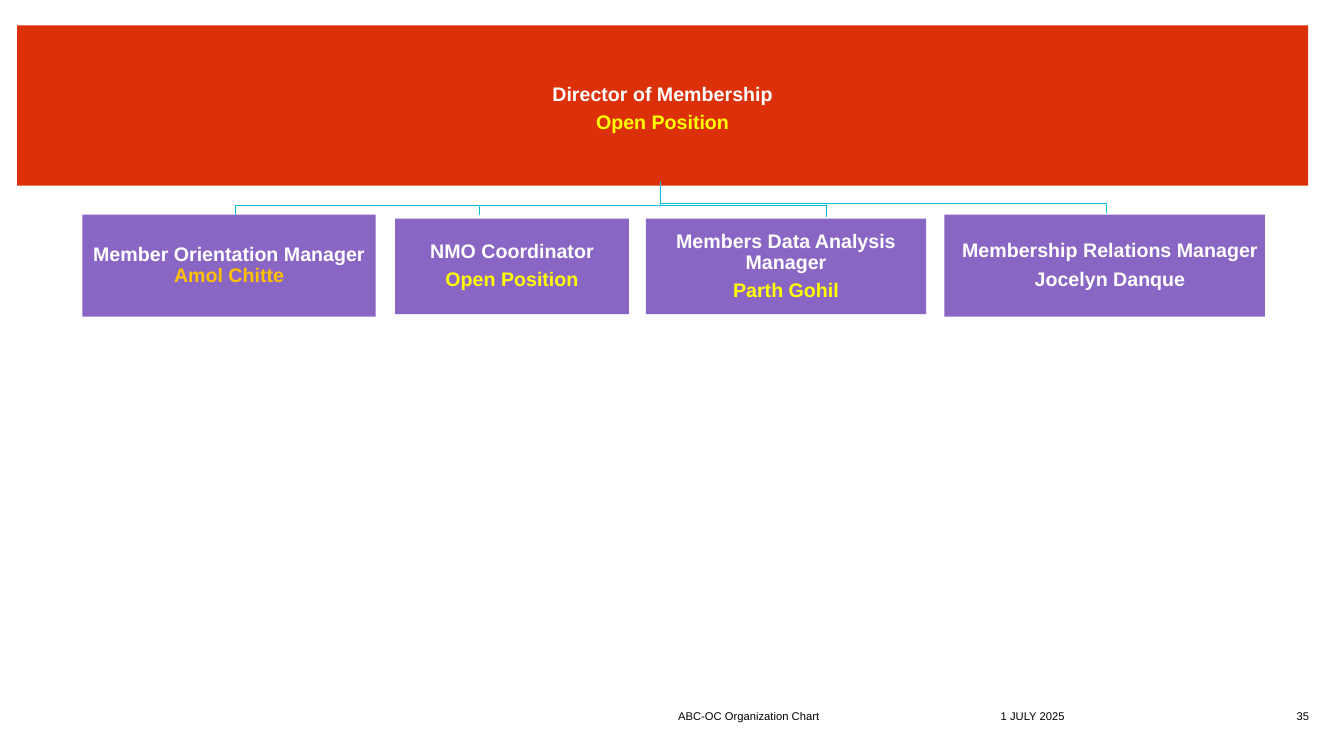
from pptx import Presentation
from pptx.dml.color import RGBColor
from pptx.enum.shapes import MSO_SHAPE
from pptx.enum.text import MSO_ANCHOR, MSO_AUTO_SIZE, PP_ALIGN
from pptx.util import Cm, Pt

RECT = MSO_SHAPE.RECTANGLE
MIDDLE, BOTTOM = MSO_ANCHOR.MIDDLE, MSO_ANCHOR.BOTTOM
LEFT, CENTER, RIGHT = PP_ALIGN.LEFT, PP_ALIGN.CENTER, PP_ALIGN.RIGHT
NO_FIT = MSO_AUTO_SIZE.NONE

COLORS = {
    "red": "DC3009",
    "purple": "8A66C4",
    "cyan": "03BEDF",
    "white": "FFFFFF",
    "yellow": "FFFF00",
    "amber": "FFC000",
    "black": "000000",
}
TITLE_ONLY = 5
TRUNK_X = 16.64

# left, top, width, height, left inset, role, name, name colour, space before name
MANAGERS = [
    (2.08, 5.41, 7.39, 2.57, 0.03, "Member Orientation Manager", "Amol Chitte", "amber", 0),
    (9.96, 5.51, 5.89, 2.41, 0.03, "NMO Coordinator", "Open Position", "yellow", 4.9),
    (16.28, 5.51, 7.06, 2.41, 0.03, "Members Data Analysis Manager", "Parth Gohil", "yellow", 4.9),
    (23.8, 5.41, 8.08, 2.57, 0.3, "Membership Relations Manager", "Jocelyn Danque", "white", 4.9),
]
# start y, bend y, end x, end y
BRANCHES = [
    (4.67, 5.18, 5.94, 5.41),
    (4.6, 5.18, 12.09, 5.41),
    (4.57, 5.18, 20.83, 5.46),
    (4.67, 5.13, 27.89, 5.36),
]
# left, width, alignment, text
FOOTERS = [
    (17.09, 7.77, LEFT, "ABC-OC Organization Chart"),
    (25.22, 5.05, LEFT, "1 JULY 2025"),
    (31.85, 1.14, RIGHT, "35"),
]


def rgb(name):
    return RGBColor.from_string(COLORS[name])


class OrgSlide:
    font = "Arial"

    def __init__(self, prs):
        self.s = prs.slides.add_slide(prs.slide_layouts[TITLE_ONLY])

    def frame(self, sp, anchor, insets):
        """Prepare a text frame; insets run left, top, right, bottom in cm."""
        tf = sp.text_frame
        tf.word_wrap, tf.auto_size, tf.vertical_anchor = True, NO_FIT, anchor
        (tf.margin_left, tf.margin_top,
         tf.margin_right, tf.margin_bottom) = map(Cm, insets)
        return tf

    def run(self, p, text, size, color, bold=False):
        r = p.add_run()
        r.text = text
        r.font.name, r.font.size, r.font.bold = self.font, Pt(size), bold
        r.font.color.rgb = rgb(color)

    def position(self, tf, role, name, name_color, gap):
        """Write a role with its holder's name below."""
        lines = [(role, "white", 0), (name, name_color, gap)]
        for i, (text, color, before) in enumerate(lines):
            p = tf.add_paragraph() if i else tf.paragraphs[0]
            p.alignment, p.line_spacing, p.space_before = CENTER, 0.9, Pt(before)
            self.run(p, text, 14, color, True)

    def director(self, left, top, width, height, role, name):
        sp = self.s.shapes.title
        sp.left, sp.top, sp.width, sp.height = map(Cm, (left, top, width, height))
        sp.fill.solid()
        sp.fill.fore_color.rgb = rgb("red")
        tf = self.frame(sp, MIDDLE, (0.03, 0.2, 0.03, 0.03))
        self.position(tf, role, name, "yellow", 4.9)

    def manager(self, left, top, width, height, inset, role, name, color, gap):
        sp = self.s.shapes.add_shape(RECT, *map(Cm, (left, top, width, height)))
        sp.shadow.inherit = False
        sp.fill.solid()
        sp.fill.fore_color.rgb = rgb("purple")
        sp.line.fill.background()
        tf = self.frame(sp, MIDDLE, (inset, 0.03, 0.03, 0.03))
        self.position(tf, role, name, color, gap)

    def branch(self, start_y, bend_y, end_x, end_y):
        """Draw an elbow line from the trunk to one manager."""
        fb = self.s.shapes.build_freeform(Cm(TRUNK_X), Cm(start_y))
        points = [(TRUNK_X, bend_y), (end_x, bend_y), (end_x, end_y)]
        fb.add_line_segments([(Cm(x), Cm(y)) for x, y in points], close=False)
        sp = fb.convert_to_shape()
        sp.shadow.inherit = False
        sp.fill.background()
        sp.line.color.rgb = rgb("cyan")
        sp.line.width = Pt(1)

    def footer(self, left, width, align, text):
        sp = self.s.shapes.add_textbox(Cm(left), Cm(17.65), Cm(width), Cm(0.56))
        p = self.frame(sp, BOTTOM, (0, 0, 0, 0)).paragraphs[0]
        p.alignment = align
        self.run(p, text, 8, "black")


def main():
    prs = Presentation()
    prs.slide_width, prs.slide_height = Cm(33.87), Cm(19.05)
    chart = OrgSlide(prs)
    chart.director(0.43, 0.64, 32.54, 4.04, "Director of Membership", "Open Position")
    for manager in MANAGERS:
        chart.manager(*manager)
    for branch in BRANCHES:
        chart.branch(*branch)
    for footer in FOOTERS:
        chart.footer(*footer)
    prs.save("out.pptx")


if __name__ == "__main__":
    main()
